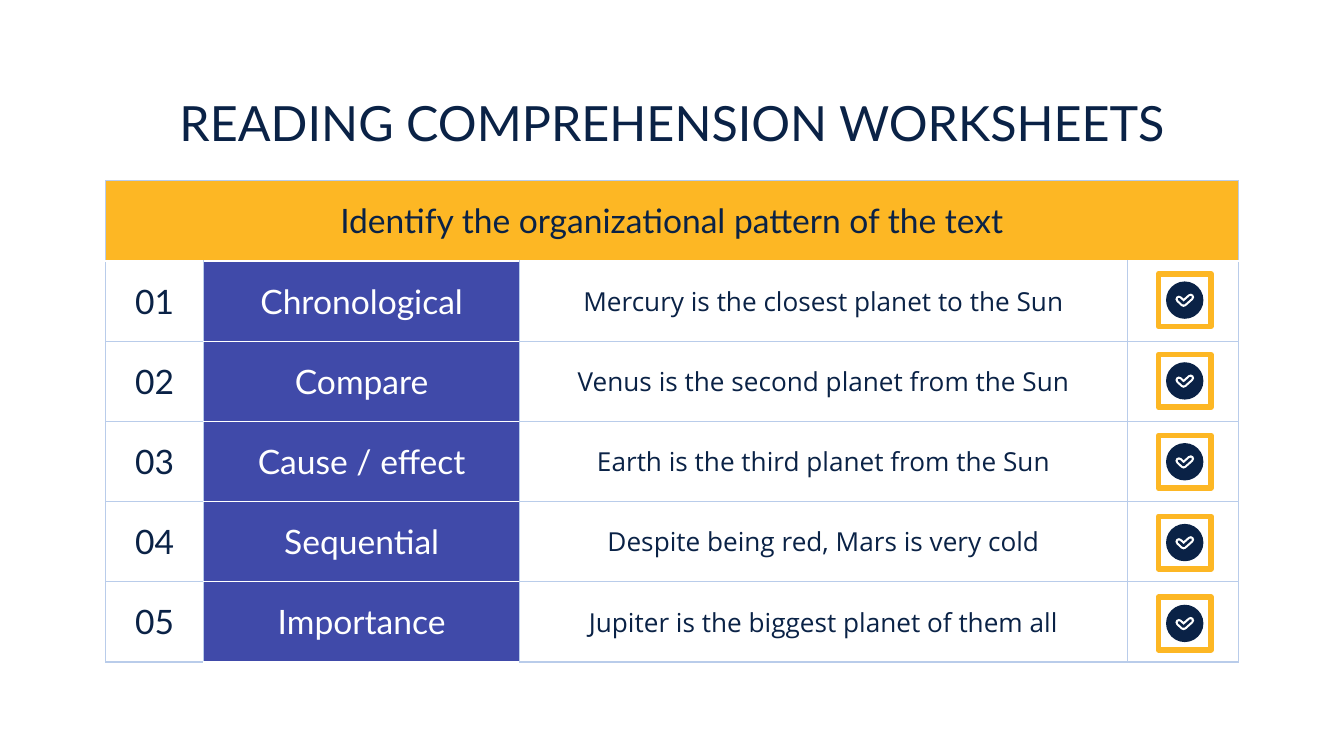
from lxml.etree import SubElement
from pptx import Presentation
from pptx.dml.color import RGBColor
from pptx.enum.shapes import MSO_SHAPE as Shape
from pptx.enum.text import MSO_ANCHOR as Anchor, MSO_AUTO_SIZE as AutoSize, PP_ALIGN as Align
from pptx.oxml.ns import qn
from pptx.util import Pt

NAVY = RGBColor(0x0A, 0x22, 0x46)
INDIGO = RGBColor(0x40, 0x4A, 0xA9)
AMBER = RGBColor(0xFD, 0xB7, 0x24)
PALE_BLUE = RGBColor(0xB9, 0xCC, 0xEA)
WHITE = RGBColor(0xFF, 0xFF, 0xFF)

ROWS = [
    ("Chronological", "Mercury is the closest planet to the Sun"),
    ("Compare", "Venus is the second planet from the Sun"),
    ("Cause / effect", "Earth is the third planet from the Sun"),
    ("Sequential", "Despite being red, Mars is very cold"),
    ("Importance", "Jupiter is the biggest planet of them all"),
]
COLUMN_WIDTHS = [52.5, 169.3, 325.7, 59.3]
ROW_HEIGHT = 43
TABLE_LEFT, TABLE_TOP = 56.6, 96.8


def style_cell(cell, text, fill, color, font="Lato", size=18, top=PALE_BLUE, bottom=PALE_BLUE):
    cell.margin_left = cell.margin_right = cell.margin_top = cell.margin_bottom = Pt(7.2)
    cell.vertical_anchor = Anchor.MIDDLE
    cell.text_frame.text = text
    para = cell.text_frame.paragraphs[0]
    para.alignment = Align.CENTER
    para.font.name, para.font.size = font, Pt(size)
    para.font.color.rgb = color
    for span in para.runs:
        span.font.name, span.font.size = font, Pt(size)
        span.font.color.rgb = color
    # Borders come before the fill in the cell properties
    properties = cell._tc.get_or_add_tcPr()
    for side, line_color in (("L", PALE_BLUE), ("R", PALE_BLUE), ("T", top), ("B", bottom)):
        line = SubElement(properties, qn(f"a:ln{side}"), w=str(Pt(0.75)))
        solid = SubElement(line, qn("a:solidFill"))
        SubElement(solid, qn("a:srgbClr"), val=str(line_color))
    cell.fill.solid()
    cell.fill.fore_color.rgb = fill


def outline(shape, color, width):
    shape.shadow.inherit = False
    shape.fill.background()
    shape.line.color.rgb = color
    shape.line.width = Pt(width)
    line = shape.line._get_or_add_ln()
    line.set("cap", "rnd")
    SubElement(line, qn("a:round"))


deck = Presentation()
deck.slide_width, deck.slide_height = Pt(720), Pt(405)
page = deck.slides.add_slide(deck.slide_layouts[5])

# Title
title = page.shapes.title
title.left, title.top, title.width, title.height = Pt(56.2), Pt(42.5), Pt(608.4), Pt(45.4)
frame = title.text_frame
frame.text = "READING COMPREHENSION WORKSHEETS"
frame.auto_size = AutoSize.NONE
frame.vertical_anchor = Anchor.MIDDLE
frame.margin_left = frame.margin_right = frame.margin_top = frame.margin_bottom = Pt(7.2)
frame.paragraphs[0].alignment = Align.CENTER
span = frame.paragraphs[0].runs[0]
span.font.name, span.font.size = "Lato", Pt(26)
span.font.color.rgb = NAVY

# Table
table = page.shapes.add_table(
    len(ROWS) + 1, len(COLUMN_WIDTHS), Pt(TABLE_LEFT), Pt(TABLE_TOP),
    Pt(sum(COLUMN_WIDTHS)), Pt(ROW_HEIGHT * (len(ROWS) + 1))).table
table.first_row = table.horz_banding = False
for column, width in zip(table.columns, COLUMN_WIDTHS):
    column.width = Pt(width)
for row in table.rows:
    row.height = Pt(ROW_HEIGHT)

# Header row
table.cell(0, 0).merge(table.cell(0, 3))
for column in range(4):
    text = "Identify the organizational pattern of the text" if column == 0 else ""
    style_cell(table.cell(0, column), text, AMBER, NAVY, bottom=WHITE)

# Body rows
for number, (pattern, sentence) in enumerate(ROWS, start=1):
    top = WHITE if number == 1 else PALE_BLUE
    style_cell(table.cell(number, 0), f"{number:02}", WHITE, NAVY, top=top)
    style_cell(table.cell(number, 1), pattern, INDIGO, WHITE, top=WHITE, bottom=WHITE)
    style_cell(table.cell(number, 2), sentence, WHITE, NAVY, "Open Sans", 14, top=top)
    style_cell(table.cell(number, 3), "", WHITE, NAVY, top=top)

# Check boxes: amber square, navy disc, navy tick with a white edge
BOX_LEFT, BOX_TOP, BOX_SIZE, BOX_STEP = 620.6, 146.7, 28.2, 43.3
DISC_SIZE = 20
TICK = [(6.9, 9.5), (9.4, 11.8), (13.2, 8.4)]
inset = (BOX_SIZE - DISC_SIZE) / 2
for index in range(len(ROWS)):
    box_top = BOX_TOP + index * BOX_STEP
    box = page.shapes.add_shape(
        Shape.RECTANGLE, Pt(BOX_LEFT), Pt(box_top), Pt(BOX_SIZE), Pt(BOX_SIZE))
    outline(box, AMBER, 3)

    left, top = BOX_LEFT + inset, box_top + inset
    disc = page.shapes.add_shape(Shape.OVAL, Pt(left), Pt(top), Pt(DISC_SIZE), Pt(DISC_SIZE))
    disc.shadow.inherit = False
    disc.fill.solid()
    disc.fill.fore_color.rgb = NAVY
    disc.line.fill.background()

    points = [(Pt(left + x), Pt(top + y)) for x, y in TICK]
    for color, width in ((WHITE, 3.7), (NAVY, 1.4)):
        builder = page.shapes.build_freeform(*points[0])
        builder.add_line_segments(points[1:], close=False)
        outline(builder.convert_to_shape(), color, width)

deck.save("out.pptx")
